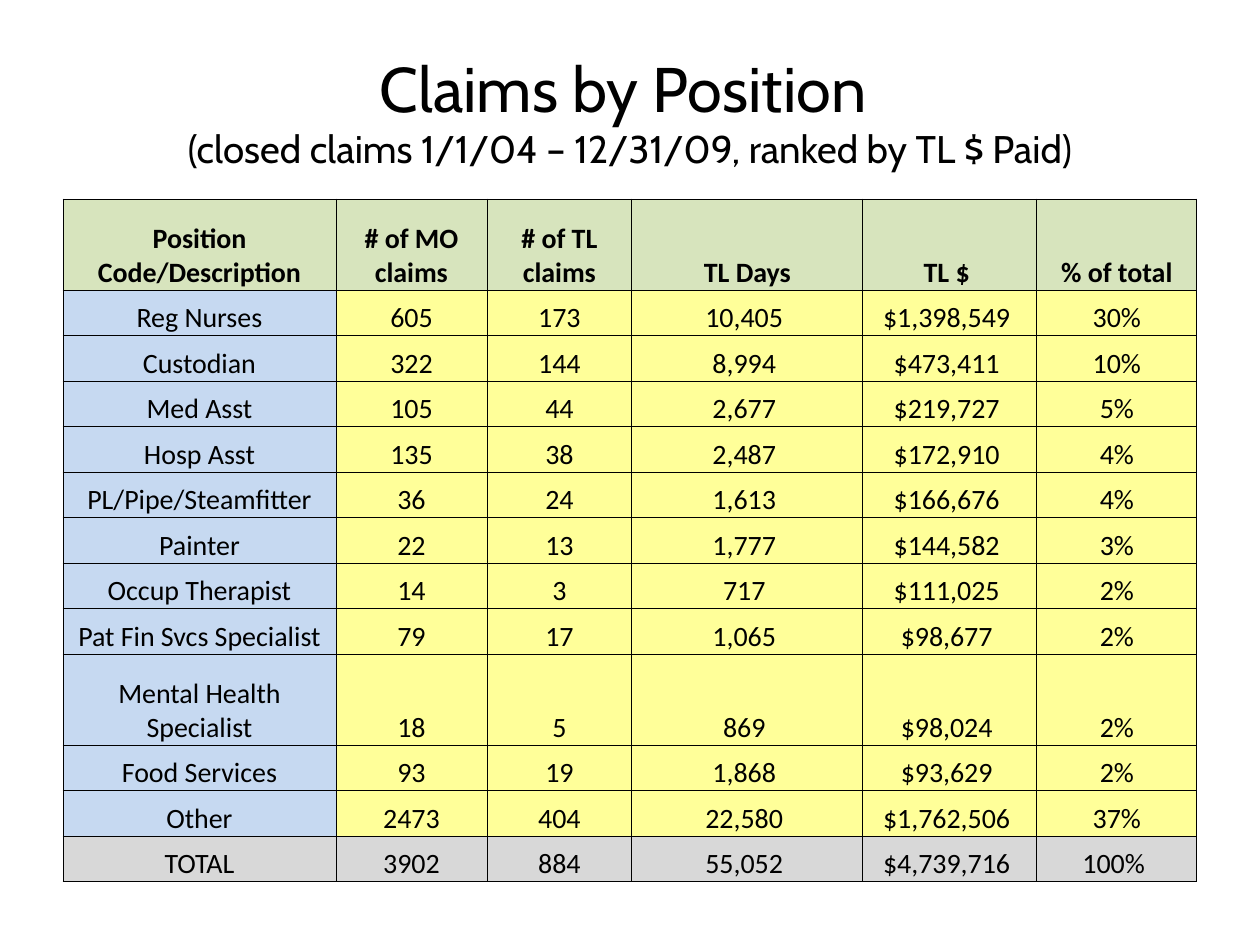
from lxml import etree
from pptx import Presentation
from pptx.dml.color import RGBColor
from pptx.enum.text import MSO_ANCHOR, PP_ALIGN
from pptx.oxml.ns import qn
from pptx.util import Pt

PX = 914400 // 126
BLACK = RGBColor(0x00, 0x00, 0x00)
GREEN = RGBColor(0xD7, 0xE4, 0xBD)
BLUE = RGBColor(0xC6, 0xD9, 0xF1)
YELLOW = RGBColor(0xFF, 0xFF, 0x99)
GRAY = RGBColor(0xD8, 0xD8, 0xD8)

TITLE = [("Claims by Position ", 36),
         ("(closed claims 1/1/04 – 12/31/09, ranked by TL $ Paid)", 22)]
ROWS = [
    ("Position Code/Description", "# of MO claims", "# of TL claims", "TL Days", "TL $ ", "% of total"),
    ("Reg Nurses", "605", "173", "10,405 ", "$1,398,549 ", "30%"),
    ("Custodian", "322", "144", "8,994 ", "$473,411 ", "10%"),
    ("Med Asst", "105", "44", "2,677 ", "$219,727 ", "5%"),
    ("Hosp Asst", "135", "38", "2,487 ", "$172,910 ", "4%"),
    ("PL/Pipe/Steamfitter", "36", "24", "1,613 ", "$166,676 ", "4%"),
    ("Painter", "22", "13", "1,777 ", "$144,582 ", "3%"),
    ("Occup Therapist", "14", "3", "717 ", "$111,025 ", "2%"),
    ("Pat Fin Svcs Specialist", "79", "17", "1,065 ", "$98,677 ", "2%"),
    ("Mental Health Specialist", "18", "5", "869 ", "$98,024 ", "2%"),
    ("Food Services", "93", "19", "1,868 ", "$93,629 ", "2%"),
    ("Other", "2473", "404", "22,580 ", "$1,762,506 ", "37%"),
    ("TOTAL", "3902", "884", "55,052 ", "$4,739,716 ", "100% "),
]
COL_WIDTHS = [273, 151, 145, 231, 174, 160]
TWO_LINE_ROWS = {0, 9}
LEFT, TABLE_TOP, TABLE_H = 63, 199, 683
WIDTH = sum(COL_WIDTHS)
CELL_FORMAT = {"vertical_anchor": MSO_ANCHOR.BOTTOM, "margin_left": 0,
               "margin_right": 0, "margin_top": 0, "margin_bottom": 0}


def set_font(font, name, size, bold=False):
    font.name, font.size, font.bold = name, Pt(size), bold
    font.color.rgb = BLACK


def add_borders(cell):
    tcPr = cell._tc.get_or_add_tcPr()
    for i, side in enumerate(("lnL", "lnR", "lnT", "lnB")):
        ln = etree.Element(qn(f"a:{side}"), w=str(Pt(0.5)))
        fill = etree.SubElement(ln, qn("a:solidFill"))
        etree.SubElement(fill, qn("a:srgbClr"), val=str(BLACK))
        tcPr.insert(i, ln)


def cell_color(row, col):
    if row == 0:
        return GREEN
    if row == len(ROWS) - 1:
        return GRAY
    return YELLOW if col else BLUE


def add_title(slide):
    s = slide.shapes.title
    s.left, s.top, s.width, s.height = (v * PX for v in (LEFT, 32, WIDTH, 157))
    tf = s.text_frame
    tf.word_wrap, tf.vertical_anchor = True, MSO_ANCHOR.MIDDLE
    p = tf.paragraphs[0]
    p.alignment = PP_ALIGN.CENTER
    for i, (text, size) in enumerate(TITLE):
        if i:
            p.add_line_break()
        r = p.add_run()
        r.text = text
        set_font(r.font, "Cabin", size)


def add_claims_table(slide):
    box = (v * PX for v in (LEFT, TABLE_TOP, WIDTH, TABLE_H))
    table = slide.shapes.add_table(len(ROWS), len(COL_WIDTHS), *box).table
    table.first_row = table.horz_banding = False
    for column, width in zip(table.columns, COL_WIDTHS):
        column.width = width * PX
    line_h = TABLE_H * PX // (len(ROWS) + len(TWO_LINE_ROWS))
    for i, values in enumerate(ROWS):
        table.rows[i].height = line_h * (2 if i in TWO_LINE_ROWS else 1)
        for j, text in enumerate(values):
            cell = table.cell(i, j)
            for name, value in CELL_FORMAT.items():
                setattr(cell, name, value)
            cell.fill.solid()
            cell.fill.fore_color.rgb = cell_color(i, j)
            add_borders(cell)
            p = cell.text_frame.paragraphs[0]
            p.alignment = PP_ALIGN.CENTER
            r = p.add_run()
            r.text = text
            set_font(r.font, "Calibri", 16, bold=i == 0)


def main():
    prs = Presentation()
    prs.slide_width, prs.slide_height = 1260 * PX, 945 * PX
    slide = prs.slides.add_slide(prs.slide_layouts[5])
    add_title(slide)
    add_claims_table(slide)
    prs.save("out.pptx")


if __name__ == "__main__":
    main()
